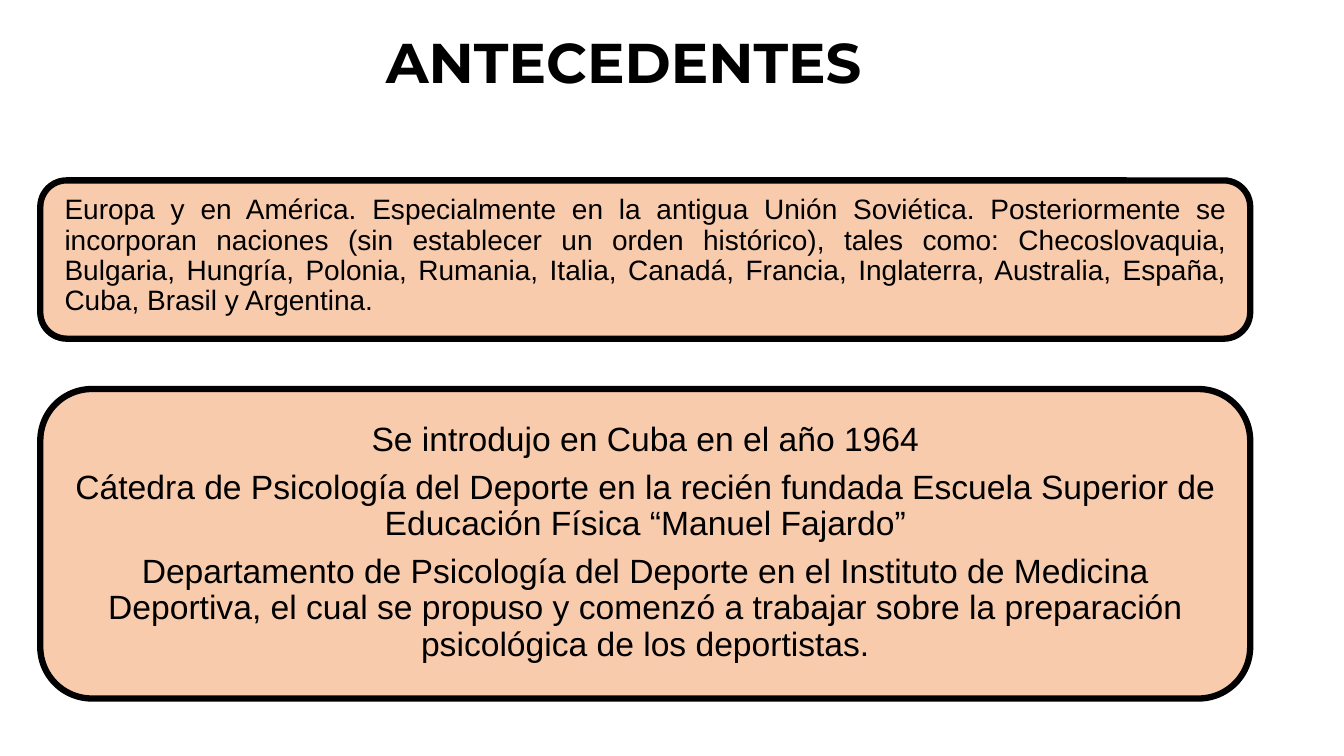
"""Build the slide on the background of sport psychology."""
from dataclasses import dataclass

from pptx import Presentation
from pptx.dml.color import RGBColor
from pptx.enum.shapes import MSO_SHAPE as Preset
from pptx.enum.text import MSO_ANCHOR as Anchor, PP_ALIGN as Align
from pptx.slide import Slide
from pptx.util import Inches, Pt


@dataclass(frozen=True)
class Theme:
    """Colours, fonts and sizes of the slide."""
    ink: RGBColor = RGBColor(0x00, 0x00, 0x00)
    panel: RGBColor = RGBColor(0xF8, 0xCB, 0xAD)
    border: float = 4.5
    heading_font: str = "Montserrat"
    body_font: str = "Arial"
    heading_size: int = 40
    history_size: int = 20
    cuba_size: int = 24


@dataclass(frozen=True)
class Box:
    """Position and size in inches."""
    left: float
    top: float
    width: float
    height: float

    def lengths(self) -> tuple[Inches, ...]:
        """Return the four measures as lengths."""
        return tuple(Inches(v) for v in (self.left, self.top, self.width, self.height))


@dataclass(frozen=True)
class Panel:
    """A filled panel with the text lying on it."""
    frame: Box
    text_area: Box
    paragraphs: tuple[str, ...]
    size: int
    align: Align
    anchor: Anchor
    side_inset: float
    top_inset: float


THEME = Theme()
HEADING = Box(1.14, 0.22, 10.09, 0.77)
PANELS = (
    Panel(
        Box(0.4, 3.86, 12, 3.07), Box(0.55, 4, 11.7, 2.77),
        (
            "Se introdujo en Cuba en el año 1964",
            "Cátedra de Psicología del Deporte en la recién fundada Escuela Superior "
            "de Educación Física “Manuel Fajardo”",
            "Departamento de Psicología del Deporte en el Instituto de Medicina "
            "Deportiva, el cual se propuso y comenzó a trabajar sobre la preparación "
            "psicológica de los deportistas.",
        ),
        THEME.cuba_size, Align.CENTER, Anchor.MIDDLE, 0.14, 0.14,
    ),
    Panel(
        Box(0.4, 1.79, 12, 1.57), Box(0.48, 1.87, 11.85, 1.42),
        (
            "Europa y en América. Especialmente en la antigua Unión Soviética. "
            "Posteriormente se incorporan naciones (sin establecer un orden histórico), "
            "tales como: Checoslovaquia, Bulgaria, Hungría, Polonia, Rumania, Italia, "
            "Canadá, Francia, Inglaterra, Australia, España, Cuba, Brasil y Argentina.",
        ),
        THEME.history_size, Align.JUSTIFY, Anchor.TOP, 0.16, 0.07,
    ),
)


def add_text(slide: Slide, box: Box, paragraphs: tuple[str, ...], *, font: str,
             size: int, bold: bool = False, align: Align = Align.CENTER,
             anchor: Anchor = Anchor.MIDDLE, side_inset: float = 0.1,
             top_inset: float = 0.05, line_spacing: float = 1.0,
             space_after: float = 0) -> None:
    """Add a wrapped text box with one format for all its paragraphs."""
    frame = slide.shapes.add_textbox(*box.lengths()).text_frame
    frame.word_wrap = True
    frame.vertical_anchor = anchor
    frame.margin_left = frame.margin_right = Inches(side_inset)
    frame.margin_top = frame.margin_bottom = Inches(top_inset)
    frame.text = "\n".join(paragraphs)
    for paragraph in frame.paragraphs:
        paragraph.alignment = align
        paragraph.line_spacing = line_spacing
        paragraph.space_after = Pt(space_after)
        paragraph.font.name = font
        paragraph.font.size = Pt(size)
        paragraph.font.bold = bold
        paragraph.font.color.rgb = THEME.ink


def add_panel(slide: Slide, panel: Panel) -> None:
    """Draw a rounded panel and its text."""
    frame = slide.shapes.add_shape(Preset.FLOWCHART_ALTERNATE_PROCESS,
                                   *panel.frame.lengths())
    frame.shadow.inherit = False
    frame.fill.solid()
    frame.fill.fore_color.rgb = THEME.panel
    frame.line.color.rgb = THEME.ink
    frame.line.width = Pt(THEME.border)
    add_text(slide, panel.text_area, panel.paragraphs, font=THEME.body_font,
             size=panel.size, align=panel.align, anchor=panel.anchor,
             side_inset=panel.side_inset, top_inset=panel.top_inset,
             line_spacing=0.9, space_after=0.35 * panel.size)


def main() -> None:
    """Create the presentation and save it."""
    presentation = Presentation()
    presentation.slide_width = Inches(13.33)
    presentation.slide_height = Inches(7.5)
    slide = presentation.slides.add_slide(presentation.slide_layouts[6])
    add_text(slide, HEADING, ("ANTECEDENTES",), font=THEME.heading_font,
             size=THEME.heading_size, bold=True)
    for panel in PANELS:
        add_panel(slide, panel)
    presentation.save("out.pptx")


if __name__ == "__main__":
    main()
